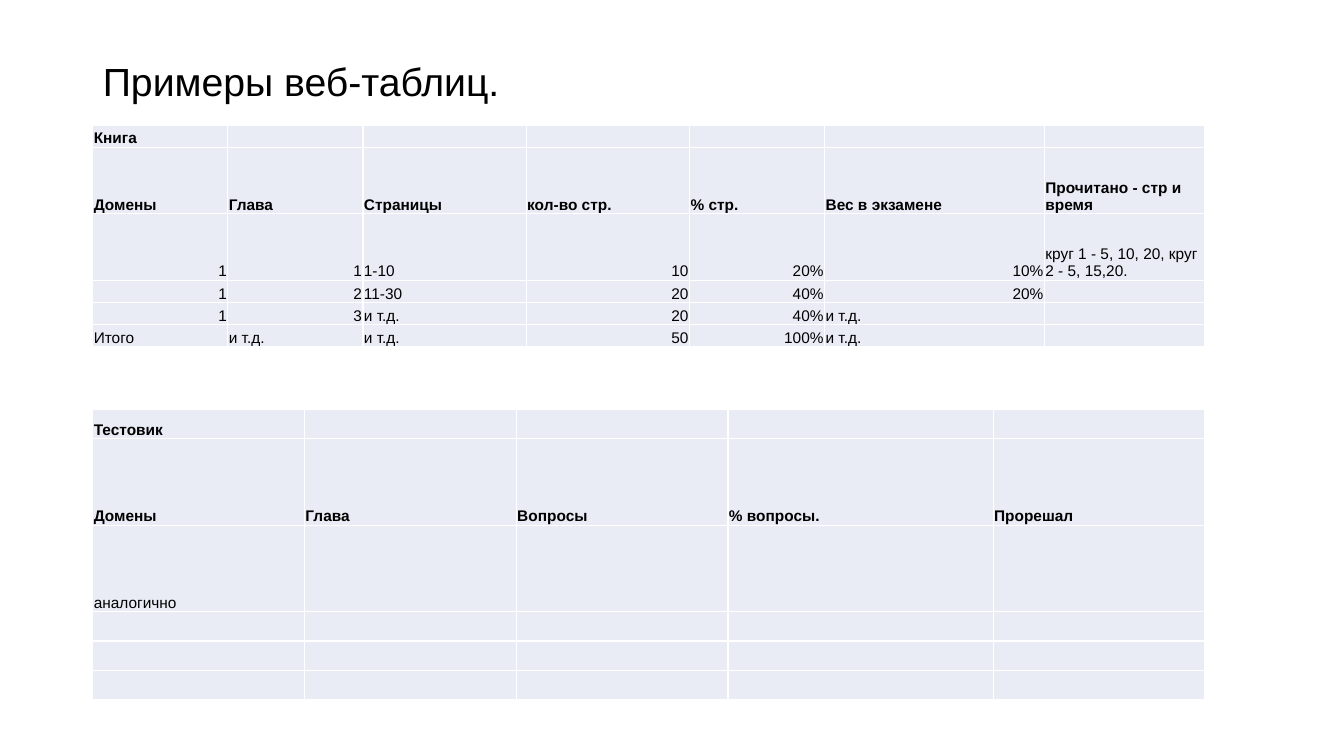
from dataclasses import dataclass

from lxml import etree
from pptx import Presentation
from pptx import util as u
from pptx.dml.color import RGBColor
from pptx.enum import text
from pptx.oxml import ns


@dataclass(frozen=True)
class Theme:
    """Colours, font and type sizes of the slide."""

    font: str = "Arial"
    ink: str = "000000"
    cell: str = "E9EBF5"
    border: str = "FFFFFF"
    title_size: int = 28
    cell_size: int = 11
    border_width: int = 1


THEME = Theme()
HEADER_ROWS = 2
CELL_FORMAT = {
    "margin_left": u.Inches(0.01),
    "margin_right": u.Inches(0.01),
    "margin_top": u.Inches(0.01),
    "margin_bottom": 0,
    "vertical_anchor": text.MSO_ANCHOR.BOTTOM,
}

BOOK_COLUMNS = [1.34, 1.34, 1.62, 1.62, 1.34, 2.18, 1.59]
BOOK_HEIGHTS = [0.22, 0.66, 0.66, 0.22, 0.22, 0.22]
BOOK_ROWS = [
    ["Книга"],
    ["Домены", "Глава", "Страницы", "кол-во стр.", "% стр.",
     "Вес в экзамене", "Прочитано - стр и время"],
    ["1", "1", "1-10", "10", "20%", "10%",
     "круг 1 - 5, 10, 20, круг 2 - 5, 15,20."],
    ["1", "2", "11-30", "20", "40%", "20%"],
    ["1", "3", "и т.д.", "20", "40%", "и т.д."],
    ["Итого", "и т.д.", "и т.д.", "50", "100%", "и т.д."],
]

TEST_COLUMNS = [2.1, 2.1, 2.1, 2.63, 2.1]
TEST_HEIGHTS = [0.29, 0.86, 0.86, 0.29, 0.29, 0.29]
TEST_ROWS = [
    ["Тестовик"],
    ["Домены", "Глава", "Вопросы", "% вопросы.", "Прорешал"],
    ["аналогично"],
]


def apply_format(target, values):
    """Set each named attribute of the target."""
    for name, value in values.items():
        setattr(target, name, value)


def format_font(font, size, bold=False):
    """Give a font the theme's face and colour."""
    apply_format(font, {"name": THEME.font, "size": u.Pt(size), "bold": bold})
    font.color.rgb = RGBColor.from_string(THEME.ink)


def add_borders(cell):
    """Draw a thin line on all four sides of a cell."""
    properties = cell._tc.get_or_add_tcPr()
    for side in ("lnL", "lnR", "lnT", "lnB"):
        line = etree.SubElement(properties, ns.qn(f"a:{side}"),
                                w=str(u.Pt(THEME.border_width)))
        fill = etree.SubElement(line, ns.qn("a:solidFill"))
        etree.SubElement(fill, ns.qn("a:srgbClr"), val=THEME.border)


def fill_cell(cell, value, bold):
    """Format one cell and write its value, numbers to the right."""
    add_borders(cell)
    apply_format(cell, CELL_FORMAT)
    cell.fill.solid()
    cell.fill.fore_color.rgb = RGBColor.from_string(THEME.cell)
    paragraph = cell.text_frame.paragraphs[0]
    if not value:
        etree.SubElement(paragraph._p, ns.qn("a:endParaRPr"),
                         sz=str(THEME.cell_size * 100))
        return
    is_number = value.rstrip("%").isdigit()
    paragraph.alignment = text.PP_ALIGN.RIGHT if is_number else text.PP_ALIGN.LEFT
    run = paragraph.add_run()
    run.text = value
    format_font(run.font, THEME.cell_size, bold)


def add_grid(slide, left, top, columns, heights, rows):
    """Place a table at the given corner; missing values stay blank."""
    frame = slide.shapes.add_table(
        len(heights), len(columns), u.Inches(left), u.Inches(top),
        u.Inches(sum(columns)), u.Inches(sum(heights)))
    table = frame.table
    apply_format(table, {"first_row": False, "horz_banding": False})
    for column, width in zip(table.columns, columns):
        column.width = u.Inches(width)
    for row, height in zip(table.rows, heights):
        row.height = u.Inches(height)
    values = {(r, c): value for r, row in enumerate(rows)
              for c, value in enumerate(row)}
    for r in range(len(heights)):
        for c in range(len(columns)):
            fill_cell(table.cell(r, c), values.get((r, c), ""), r < HEADER_ROWS)


def add_title(slide, left, top, width, height):
    """Write the heading in the title placeholder."""
    title = slide.shapes.title
    box = {"left": left, "top": top, "width": width, "height": height}
    apply_format(title, {name: u.Inches(value) for name, value in box.items()})
    apply_format(title.text_frame, {
        "text": "Примеры веб-таблиц.",
        "vertical_anchor": text.MSO_ANCHOR.TOP,
        "word_wrap": True,
        "auto_size": text.MSO_AUTO_SIZE.NONE,
    })
    paragraph = title.text_frame.paragraphs[0]
    apply_format(paragraph, {"alignment": text.PP_ALIGN.LEFT, "line_spacing": 0.9})
    format_font(paragraph.runs[0].font, THEME.title_size)


def main():
    """Build the slide and save it."""
    presentation = Presentation()
    apply_format(presentation, {"slide_width": u.Inches(13.33),
                                "slide_height": u.Inches(7.5)})
    slide = presentation.slides.add_slide(presentation.slide_layouts[5])
    left = 0.92
    add_title(slide, left, 0.57, 11.5, 0.6)
    add_grid(slide, left, 1.24, BOOK_COLUMNS, BOOK_HEIGHTS, BOOK_ROWS)
    add_grid(slide, left, 4.06, TEST_COLUMNS, TEST_HEIGHTS, TEST_ROWS)
    presentation.save("out.pptx")


if __name__ == "__main__":
    main()
